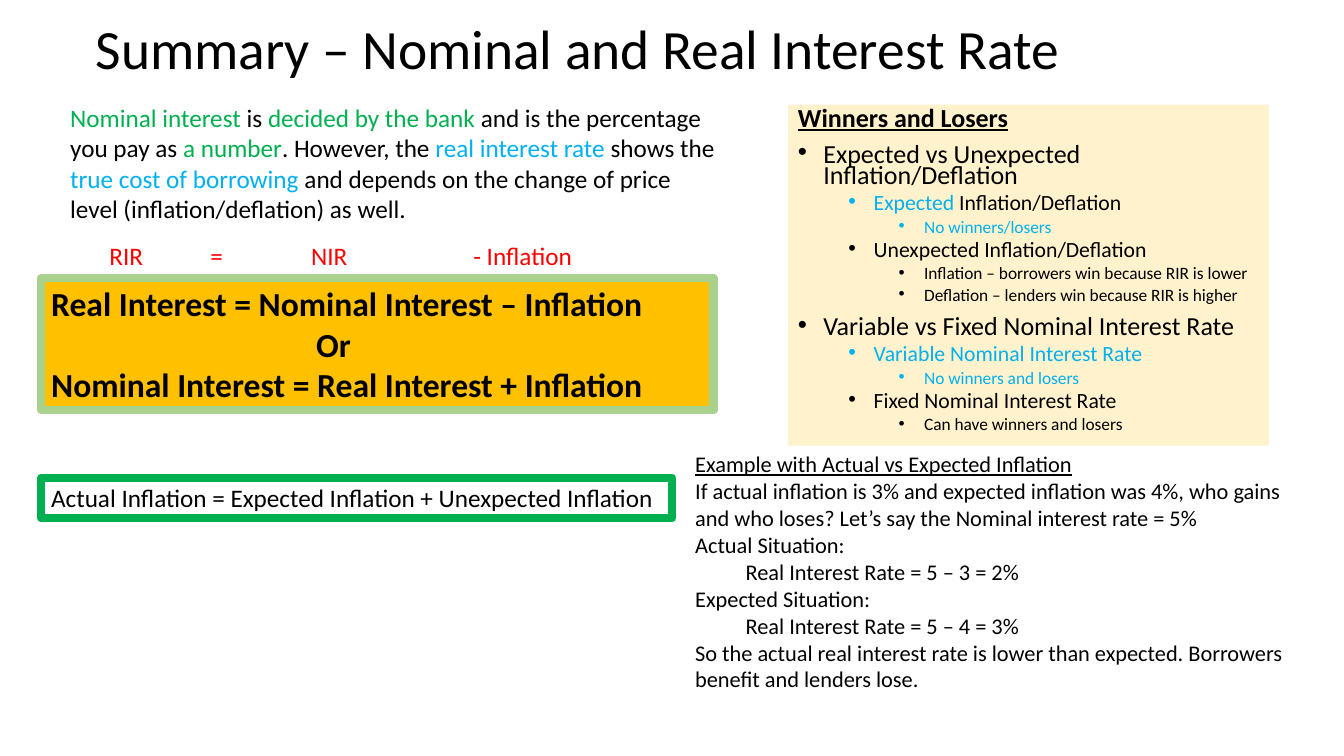
"""Build the summary slide on nominal and real interest rates."""
from lxml import etree
from pptx import Presentation
from pptx.dml.color import RGBColor
from pptx.enum.text import MSO_ANCHOR
from pptx.oxml.ns import qn
from pptx.util import Cm, Pt

TOP, MIDDLE = MSO_ANCHOR.TOP, MSO_ANCHOR.MIDDLE
FONT = "Calibri"
BLACK, RED, GREEN, BLUE = "000000", "FF0000", "00B050", "00B0F0"
CREAM, AMBER, SAGE = "FFF2CC", "FFC000", "A9D18E"

TITLE = "Summary – Nominal and Real Interest Rate"
INTRO = [
    ("Nominal interest ", GREEN), ("is ", BLACK),
    ("decided by the bank ", GREEN), ("and is the percentage you pay as ", BLACK),
    ("a number", GREEN), (". However, the ", BLACK),
    ("real interest rate ", BLUE), ("shows the ", BLACK),
    ("true cost of borrowing ", BLUE),
    ("and depends on the change of price level (inflation/deflation) as well.", BLACK),
]
LABELS = "RIR\t=\tNIR\t- Inflation"
LABEL_TABS = (2.54, 5.08, 9.17)
FORMULAS = [
    ("Real Interest = Nominal Interest – Inflation", 0),
    ("Or", 6.68),
    ("Nominal Interest = Real Interest + Inflation", 0),
]
INFLATION = "Actual Inflation = Expected Inflation + Unexpected Inflation"
OUTLINE_TITLE = "Winners and Losers"
OUTLINE = [
    (0, [("Expected vs Unexpected Inflation/Deflation", BLACK)]),
    (1, [("Expected", BLUE), (" Inflation/Deflation", BLACK)]),
    (2, [("No winners/losers", BLUE)]),
    (1, [("Unexpected Inflation/Deflation", BLACK)]),
    (2, [("Inflation – borrowers win because RIR is lower", BLACK)]),
    (2, [("Deflation – lenders win because RIR is higher", BLACK)]),
    (0, [("Variable vs Fixed Nominal Interest Rate", BLACK)]),
    (1, [("Variable Nominal Interest Rate", BLUE)]),
    (2, [("No winners and losers", BLUE)]),
    (1, [("Fixed Nominal Interest Rate", BLACK)]),
    (2, [("Can have winners and losers", BLACK)]),
]
LEVEL_SIZES, LEVEL_GAPS = (18.6, 15.5, 12.4), (10, 5, 5)
EXAMPLE_TITLE = "Example with Actual vs Expected Inflation"
EXAMPLE = [
    "If actual inflation is 3% and expected inflation was 4%, who gains and who "
    "loses? Let’s say the Nominal interest rate = 5%",
    "Actual Situation:",
    "\tReal Interest Rate = 5 – 3 = 2%",
    "Expected Situation:",
    "\tReal Interest Rate = 5 – 4 = 3%",
    "So the actual real interest rate is lower than expected. Borrowers benefit "
    "and lenders lose.",
]


def color(value):
    """Turn a hex string into a colour."""
    return RGBColor.from_string(value)


def add_box(page, place, fill=None, line=None, anchor=TOP):
    """Add a wrapping text box, filled and outlined on request."""
    box = page.shapes.add_textbox(*(Cm(length) for length in place))
    box.text_frame.word_wrap = True
    box.text_frame.vertical_anchor = anchor
    if fill:
        box.fill.solid()
        box.fill.fore_color.rgb = color(fill)
    if line:
        box.line.color.rgb = color(line)
        box.line.width = Pt(6)
    return box.text_frame


def add_para(frame, spans, size, spacing=None, gap=0, bold=False, underline=False):
    """Write the next paragraph of a frame from (text, colour) spans."""
    para = frame.paragraphs[0]
    if para.runs:
        para = frame.add_paragraph()
        para.space_before = Pt(gap)
    if spacing:
        para.line_spacing = spacing
    for text, tint in spans:
        span = para.add_run()
        span.text = text
        span.font.name, span.font.size = FONT, Pt(size)
        span.font.bold, span.font.underline = bold, underline
        span.font.color.rgb = color(tint)
    return para


def set_indent(para, left, first=0):
    """Set the left margin and first-line indent of a paragraph."""
    properties = para._p.get_or_add_pPr()
    properties.set("marL", str(Cm(left)))
    properties.set("indent", str(Cm(first)))
    return properties


def add_bullet(para, level):
    """Give a paragraph a round bullet at an outline level."""
    properties = set_indent(para, 0.64 + 1.27 * level, -0.64)
    properties.set("lvl", str(level))
    etree.SubElement(properties, qn("a:buFont")).set("typeface", "Arial")
    etree.SubElement(properties, qn("a:buChar")).set("char", "•")


def add_tabs(para, stops):
    """Give a paragraph left-aligned tab stops."""
    tabs = etree.SubElement(para._p.get_or_add_pPr(), qn("a:tabLst"))
    for stop in stops:
        tab = etree.SubElement(tabs, qn("a:tab"))
        tab.set("pos", str(Cm(stop)))
        tab.set("algn", "l")


def main():
    """Compose and save the slide."""
    deck = Presentation()
    deck.slide_width, deck.slide_height = Cm(33.87), Cm(19.05)
    page = deck.slides.add_slide(deck.slide_layouts[6])

    frame = add_box(page, (2.16, 0.38, 29.21, 1.85), anchor=MIDDLE)
    add_para(frame, [(TITLE, BLACK)], 39.6, spacing=0.9)

    frame = add_box(page, (19.86, 2.64, 12.12, 8.59), fill=CREAM)
    add_para(frame, [(OUTLINE_TITLE, BLACK)], LEVEL_SIZES[0], spacing=0.7,
             bold=True, underline=True)
    for level, spans in OUTLINE:
        para = add_para(frame, spans, LEVEL_SIZES[level], spacing=0.7,
                        gap=LEVEL_GAPS[level])
        add_bullet(para, level)

    frame = add_box(page, (2.51, 5.92, 15.01, 1.02))
    add_tabs(add_para(frame, [(LABELS, RED)], 18), LABEL_TABS)

    frame = add_box(page, (1.04, 7.01, 16.94, 3.33), fill=AMBER, line=SAGE)
    for text, left in FORMULAS:
        set_indent(add_para(frame, [(text, BLACK)], 24, bold=True), left)

    frame = add_box(page, (1.52, 2.46, 16.92, 3.33))
    add_para(frame, INTRO, 18)

    frame = add_box(page, (17.27, 11.23, 16.1, 7.34))
    add_para(frame, [(EXAMPLE_TITLE, BLACK)], 16, underline=True)
    for text in EXAMPLE:
        add_para(frame, [(text, BLACK)], 16)

    frame = add_box(page, (1.04, 12.04, 15.9, 1.02), line=GREEN)
    add_para(frame, [(INFLATION, BLACK)], 18)

    deck.save("out.pptx")


if __name__ == "__main__":
    main()
